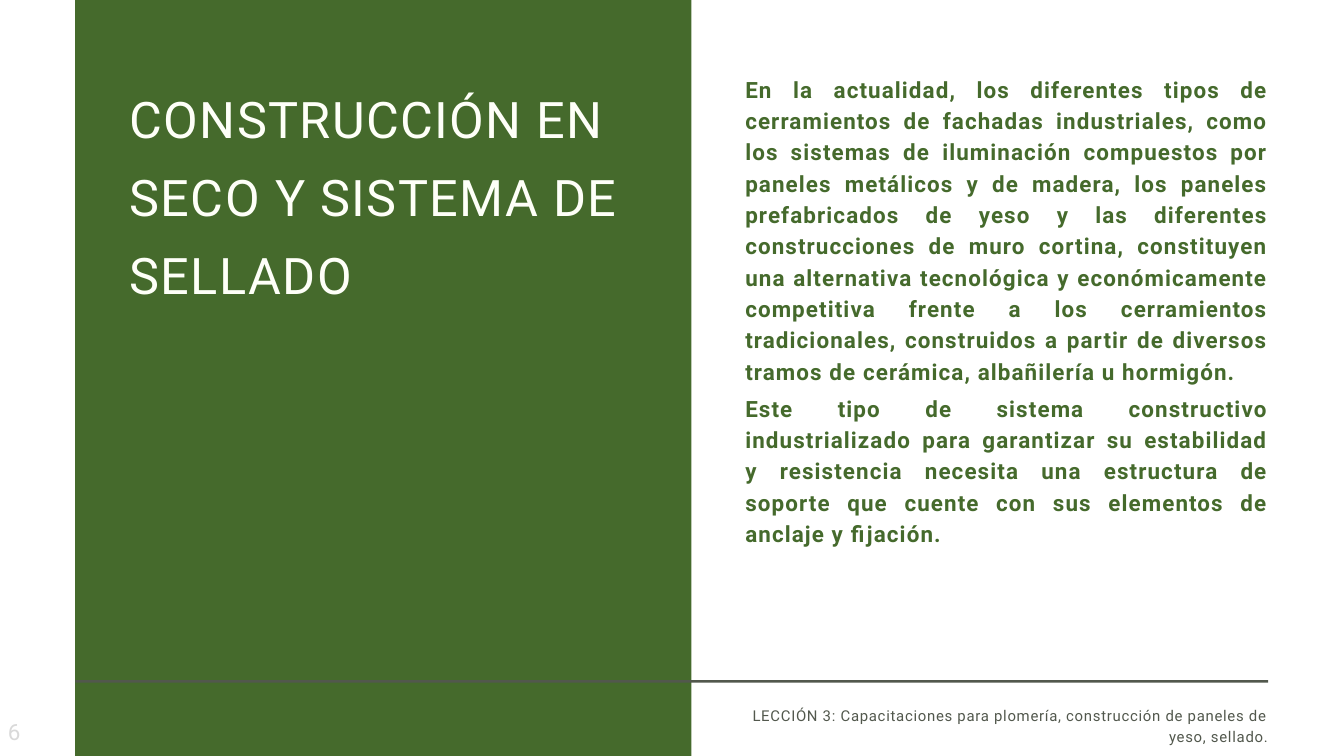
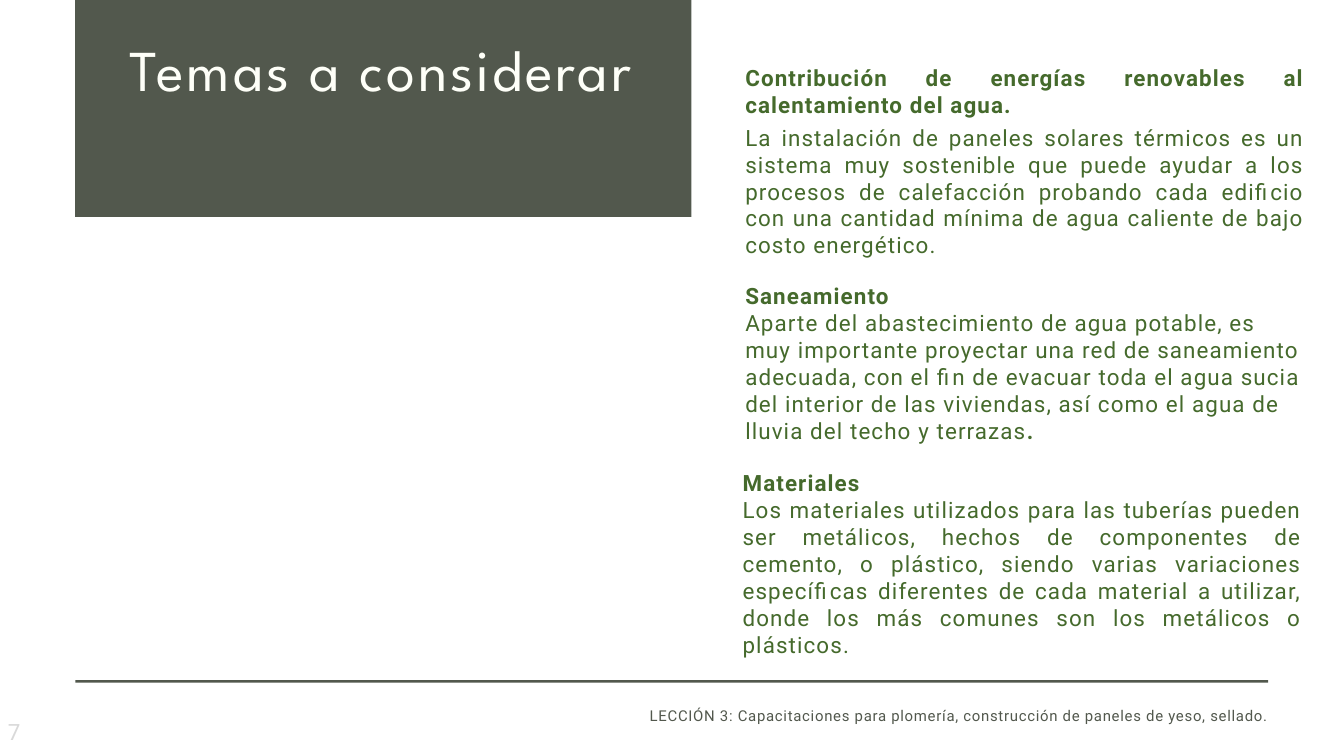
from dataclasses import dataclass

from pptx import Presentation
from pptx.dml.color import RGBColor
from pptx.enum.shapes import MSO_SHAPE
from pptx.enum.text import MSO_ANCHOR, MSO_AUTO_SIZE, PP_ALIGN
from pptx.oxml.xmlchemy import OxmlElement
from pptx.util import Inches, Pt

RECTANGLE = MSO_SHAPE.RECTANGLE
TOP, MIDDLE = MSO_ANCHOR.TOP, MSO_ANCHOR.MIDDLE
LEFT, RIGHT, JUSTIFY = PP_ALIGN.LEFT, PP_ALIGN.RIGHT, PP_ALIGN.JUSTIFY
FIT_NONE = MSO_AUTO_SIZE.NONE
TITLE_AND_CONTENT = 1


@dataclass(frozen=True)
class Theme:
    green: str = "456A2C"
    gray: str = "52584D"
    cream: str = "FEFFF8"
    pale: str = "D9D9D9"
    font: str = "Roboto"
    display_font: str = "League Spartan"
    text_size: int = 24
    footer_size: int = 16
    title_leading: float = 83.7
    text_leading: float = 33.6
    footer_leading: float = 22.4
    paragraph_gap: int = 6


THEME = Theme()
SLIDE_SIZE = (20, 11.25)
BAND_LEFT, BAND_WIDTH = 1.12, 9.17
TITLE_LEFT, TITLE_WIDTH = 1.93, 7.56
RULE = (1.12, 10.12, 17.75, 0.04)
NUMBER = (0.02, 10.69, 2.33, 0.4)

FOOTER = "LECCIÓN 3: Capacitaciones para plomería, construcción de paneles de yeso, sellado."

# A paragraph is a list of (text, bold) spans; the first block of a slide is its body.
SLIDES = [
    {
        "number": 6,
        "title": "CONSTRUCCIÓN EN SECO Y SISTEMA DE SELLADO",
        "title_format": {"size": 54, "font": THEME.font, "tracking": 1.5},
        "title_rows": (1.05, 3.47),
        "band": (THEME.green, -0.37, 11.98),
        "footer": (11.09, 10.47, 7.78, 0.6),
        "blocks": [
            {
                "at": (11.09, 1.06, 7.78, 7.81),
                "aligns": (JUSTIFY, JUSTIFY),
                "leadings": (THEME.text_leading, THEME.text_leading),
                "gap": THEME.paragraph_gap,
                "paragraphs": [
                    [("En la actualidad, los diferentes tipos de cerramientos de fachadas "
                      "industriales, como los sistemas de iluminación compuestos por paneles "
                      "metálicos y de madera, los paneles prefabricados de yeso y las "
                      "diferentes construcciones de muro cortina, constituyen una alternativa "
                      "tecnológica y económicamente competitiva frente a los cerramientos "
                      "tradicionales, construidos a partir de diversos tramos de cerámica, "
                      "albañilería u hormigón.", True)],
                    [("Este tipo de sistema constructivo industrializado para garantizar su "
                      "estabilidad y resistencia necesita una estructura de soporte que cuente "
                      "con sus elementos de anclaje y fijación.", True)],
                ],
            },
        ],
    },
    {
        "number": 7,
        "title": "Temas a considerar",
        "title_format": {"size": 62, "font": THEME.display_font, "tracking": 3.1},
        "title_rows": (0.37, 2.32),
        "band": (THEME.gray, -0.34, 3.57),
        "footer": (9.49, 10.47, 9.39, 0.29),
        "blocks": [
            {
                "at": (11.09, 0.96, 8.32, 2.91),
                "aligns": (JUSTIFY, JUSTIFY),
                "leadings": (1.0, 1.0),
                "gap": THEME.paragraph_gap,
                "paragraphs": [
                    [("Contribución de energías renovables al calentamiento del agua.", True)],
                    [("La instalación de paneles solares térmicos es un sistema muy sostenible "
                      "que puede ayudar a los procesos de calefacción probando cada edificio "
                      "con una cantidad mínima de agua caliente de bajo costo energético.",
                      False)],
                ],
            },
            {
                "at": (11.09, 4.2, 8.32, 2.42),
                "aligns": (LEFT, LEFT),
                "leadings": (1.0, 1.0),
                "gap": 0,
                "paragraphs": [
                    [("Saneamiento", True)],
                    [("Aparte del abastecimiento de agua potable, es muy importante proyectar "
                      "una red de saneamiento adecuada, con el fin de evacuar toda el agua "
                      "sucia del interior de las viviendas, así como el agua de lluvia del "
                      "techo y terrazas", False), (".", True)],
                ],
            },
            {
                "at": (11.05, 6.92, 8.32, 2.5),
                "aligns": (LEFT, JUSTIFY),
                "leadings": (THEME.text_leading, 1.0),
                "gap": 0,
                "paragraphs": [
                    [("Materiales", True)],
                    [("Los materiales utilizados para las tuberías pueden ser metálicos, hechos "
                      "de componentes de cemento, o plástico, siendo varias variaciones "
                      "específicas diferentes de cada material a utilizar, donde los más "
                      "comunes son los metálicos o plásticos.", False)],
                ],
            },
        ],
    },
]


def place(box, at):
    box.left, box.top, box.width, box.height = map(Inches, at)


def add_bar(page, at, color):
    """Add a filled bar behind everything already on the page."""
    bar = page.shapes.add_shape(RECTANGLE, *map(Inches, at))
    bar.shadow.inherit = False
    bar.fill.solid()
    bar.fill.fore_color.rgb = RGBColor.from_string(color)
    bar.line.fill.background()
    page.shapes._spTree.insert(2, bar._element)


def add_box(page, at):
    return page.shapes.add_textbox(*map(Inches, at))


def clear_bullet(para):
    properties = para._p.get_or_add_pPr()
    properties.set("marL", "0")
    properties.set("indent", "0")
    properties.append(OxmlElement("a:buNone"))


def write(box, paragraphs, *, color, aligns=(LEFT,), leadings=(1.0,), gap=0,
          size=THEME.text_size, font=THEME.font, tracking=1.2, anchor=TOP, inset=0):
    """Fill a box; a float leading of 1.0 is a multiple, larger values are points."""
    frame = box.text_frame
    frame.word_wrap = True
    frame.auto_size = FIT_NONE
    frame.vertical_anchor = anchor
    frame.margin_left = frame.margin_right = Inches(inset)
    frame.margin_top = frame.margin_bottom = Inches(inset / 2)
    for index, (spans, align, leading) in enumerate(zip(paragraphs, aligns, leadings)):
        para = frame.add_paragraph() if index else frame.paragraphs[0]
        para.alignment = align
        para.line_spacing = leading if leading == 1.0 else Pt(leading)
        para.space_before = Pt(0)
        para.space_after = Pt(gap)
        clear_bullet(para)
        for text, bold in spans:
            span = para.add_run()
            span.text = text
            span.font.size = Pt(size)
            span.font.name = font
            span.font.bold = bold
            span.font.color.rgb = RGBColor.from_string(color)
            span._r.get_or_add_rPr().set("spc", str(round(tracking * 100)))


def build_slide(deck, content):
    page = deck.slides.add_slide(deck.slide_layouts[TITLE_AND_CONTENT])
    title, body = page.shapes.title, page.placeholders[1]

    band_color, band_top, band_height = content["band"]
    add_bar(page, RULE, THEME.gray)
    add_bar(page, (BAND_LEFT, band_top, BAND_WIDTH, band_height), band_color)
    # The rule crosses the band, so it goes directly above it.

    title_top, title_height = content["title_rows"]
    place(title, (TITLE_LEFT, title_top, TITLE_WIDTH, title_height))
    write(title, [[(content["title"], False)]], color=THEME.cream,
          leadings=(THEME.title_leading,), **content["title_format"])

    for index, block in enumerate(content["blocks"]):
        box = add_box(page, block["at"]) if index else body
        place(box, block["at"])
        write(box, block["paragraphs"], color=THEME.green, aligns=block["aligns"],
              leadings=block["leadings"], gap=block["gap"])

    write(add_box(page, NUMBER), [[(str(content["number"]), False)]],
          color=THEME.pale, anchor=MIDDLE, inset=0.1)
    write(add_box(page, content["footer"]), [[(FOOTER, False)]], color=THEME.gray,
          aligns=(RIGHT,), leadings=(THEME.footer_leading,),
          size=THEME.footer_size, tracking=0.8)


def main():
    deck = Presentation()
    deck.slide_width, deck.slide_height = map(Inches, SLIDE_SIZE)
    for content in SLIDES:
        build_slide(deck, content)
    deck.save("out.pptx")


if __name__ == "__main__":
    main()
